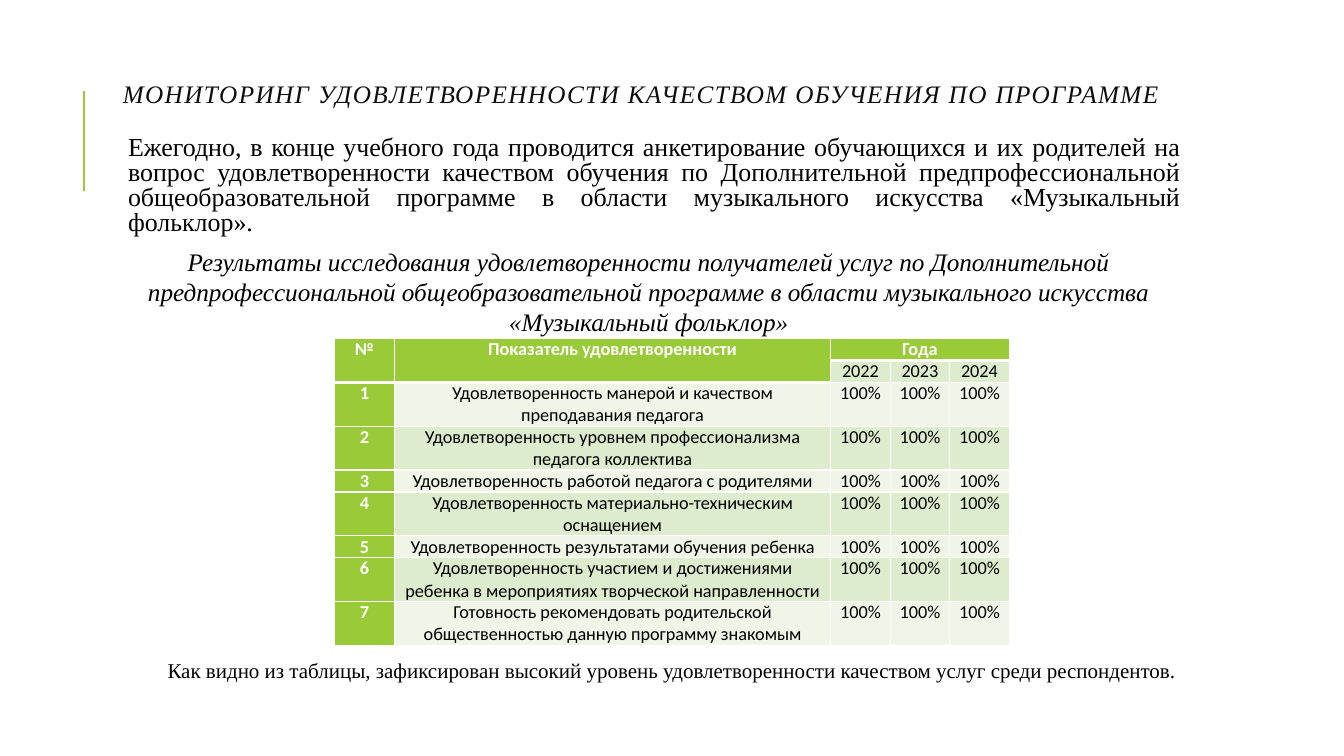
import pptx
import pptx.dml.color
import pptx.enum.shapes
import pptx.enum.text
import pptx.oxml
import pptx.oxml.ns
import pptx.util

ALIGN = pptx.enum.text.PP_ALIGN
ANCHOR = pptx.enum.text.MSO_ANCHOR
NAMESPACE = pptx.oxml.ns.nsdecls("a")

YEARS = ["2022", "2023", "2024"]
INDICATORS = [  # wording, lines of text in the row
    ("Удовлетворенность манерой и качеством преподавания педагога", 2),
    ("Удовлетворенность уровнем профессионализма педагога коллектива", 2),
    ("Удовлетворенность работой педагога с родителями", 1),
    ("Удовлетворенность материально-техническим оснащением", 2),
    ("Удовлетворенность результатами обучения ребенка", 1),
    ("Удовлетворенность участием и достижениями ребенка в мероприятиях творческой направленности", 2),
    ("Готовность рекомендовать родительской общественностью данную программу знакомым", 2),
]


def color(value):
    return pptx.dml.color.RGBColor.from_string(value)


class SlideBuilder:
    """Places elements on a grid of 100 columns by 100 rows."""

    SERIF, SANS = "Times New Roman", "Calibri"
    GREEN, WHITE, BLACK, TITLE = "99CB38", "FFFFFF", "000000", "0D0D0D"
    BANDS = ["DEECCE", "EFF6E8"]

    def __init__(self, presentation):
        self.width = presentation.slide_width
        self.height = presentation.slide_height
        self.slide = presentation.slides.add_slide(presentation.slide_layouts[6])

    def x(self, columns):
        return round(self.width * columns / 100)

    def y(self, rows):
        return round(self.height * rows / 100)

    def fill_text(self, text_frame, text, size, font, text_color, align=ALIGN.CENTER,
                  bold=False, italic=False, after=8, line_spacing=None, tracking=0):
        text_frame.text = text
        paragraph = text_frame.paragraphs[0]
        paragraph.alignment = align
        paragraph.space_after = pptx.util.Pt(after)
        if line_spacing:
            paragraph.line_spacing = line_spacing
        for run in paragraph.runs:
            run.font.name = font
            run.font.size = pptx.util.Pt(size)
            run.font.bold = bold
            run.font.italic = italic
            run.font.color.rgb = color(text_color)
            if tracking:
                run._r.get_or_add_rPr().set("spc", str(tracking * 100))

    def text(self, left, top, width, height, text, size, text_color=BLACK,
             anchor=ANCHOR.TOP, grow=False, left_inset=0.1, right_inset=0.1, **style):
        shape = self.slide.shapes.add_textbox(
            self.x(left), self.y(top), self.x(width), self.y(height))
        frame = shape.text_frame
        frame.word_wrap = True
        frame.vertical_anchor = anchor
        frame.margin_left = pptx.util.Inches(left_inset)
        frame.margin_right = pptx.util.Inches(right_inset)
        if grow:
            frame.auto_size = pptx.enum.text.MSO_AUTO_SIZE.SHAPE_TO_FIT_TEXT
        self.fill_text(frame, text, size, self.SERIF, text_color, **style)

    def line(self, column, top, bottom, weight):
        connector = self.slide.shapes.add_connector(
            pptx.enum.shapes.MSO_CONNECTOR.STRAIGHT,
            self.x(column), self.y(bottom), self.x(column), self.y(top))
        connector.line.color.rgb = color(self.GREEN)
        connector.line.width = pptx.util.Pt(weight)
        connector._element.spPr.append(
            pptx.oxml.parse_xml(f"<a:effectLst {NAMESPACE}/>"))

    def borders(self, cell, top, bottom):
        properties = cell._tc.get_or_add_tcPr()
        for side, weight in (("L", 1), ("R", 1), ("T", top), ("B", bottom)):
            properties.append(pptx.oxml.parse_xml(
                f'<a:ln{side} {NAMESPACE} w="{int(pptx.util.Pt(weight))}"><a:solidFill>'
                f'<a:srgbClr val="{self.WHITE}"/></a:solidFill></a:ln{side}>'))

    def table(self, left, top, column_widths, row_heights, rows):
        table = self.slide.shapes.add_table(
            len(rows), len(column_widths), self.x(left), self.y(top),
            self.x(sum(column_widths)), self.y(sum(row_heights))).table
        table.first_row = table.horz_banding = False
        for column, width in zip(table.columns, column_widths):
            column.width = self.x(width)
        for row, height in zip(table.rows, row_heights):
            row.height = self.y(height)
        for r, values in enumerate(rows):
            for c, value in enumerate(values):
                cell = table.cell(r, c)
                header_end = 1 if c < 2 else 0
                header = r <= header_end or c == 0
                self.borders(cell, top=3 if r == header_end + 1 else 1,
                             bottom=3 if r <= header_end else 1)
                cell.fill.solid()
                cell.fill.fore_color.rgb = color(
                    self.GREEN if header else self.BANDS[(r + 1) % 2])
                cell.margin_left = cell.margin_right = pptx.util.Inches(0.07)
                cell.margin_top = cell.margin_bottom = 0
                self.fill_text(cell.text_frame, value, 13, self.SANS,
                               self.WHITE if header else self.BLACK, bold=header)
        return table


def main():
    presentation = pptx.Presentation()
    presentation.slide_width = pptx.util.Inches(13.33)
    presentation.slide_height = pptx.util.Inches(7.5)
    builder = SlideBuilder(presentation)

    # Title with its accent line
    builder.line(6.22, 12, 25.33, 1.5)
    builder.text(8.4, 7.6, 79.73, 10.27,
                 "МОНИТОРИНГ УДОВЛЕТВОРЕННОСТИ КАЧЕСТВОМ ОБУЧЕНИЯ ПО ПРОГРАММЕ",
                 18, builder.TITLE, anchor=ANCHOR.MIDDLE, align=ALIGN.LEFT,
                 italic=True, after=0, line_spacing=0.8, tracking=1)

    # Introduction
    builder.text(8.4, 17.47, 79.73, 15.33,
                 "Ежегодно, в конце учебного года проводится анкетирование обучающихся "
                 "и их родителей на вопрос удовлетворенности качеством обучения по "
                 "Дополнительной предпрофессиональной общеобразовательной программе "
                 "в области музыкального искусства «Музыкальный фольклор».",
                 18.5, left_inset=0.15, right_inset=0.05, align=ALIGN.JUSTIFY,
                 after=2, line_spacing=0.8)

    # Table heading
    builder.text(8.4, 31.87, 79.73, 13.47,
                 "Результаты исследования удовлетворенности получателей услуг по "
                 "Дополнительной предпрофессиональной общеобразовательной программе "
                 "в области музыкального искусства «Музыкальный фольклор»",
                 18, grow=True, italic=True)

    # Survey results
    rows = [["№", "Показатель удовлетворенности", "Года", "", ""], ["", ""] + YEARS]
    rows += [[str(number), wording] + ["100%"] * len(YEARS)
             for number, (wording, _) in enumerate(INDICATORS, 1)]
    heights = [2.8 * lines for lines in [1, 1] + [lines for _, lines in INDICATORS]]
    table = builder.table(24.9, 44.8, [4.43, 32.48] + [4.43] * len(YEARS), heights, rows)
    for first, last in (((0, 0), (1, 0)), ((0, 1), (1, 1)), ((0, 2), (0, 4))):
        table.cell(*first).merge(table.cell(*last))

    # Conclusion
    builder.text(10.13, 86.27, 79.73, 4.67,
                 "Как видно из таблицы, зафиксирован высокий уровень удовлетворенности "
                 "качеством услуг среди респондентов.", 15, grow=True)

    presentation.save("out.pptx")


if __name__ == "__main__":
    main()
